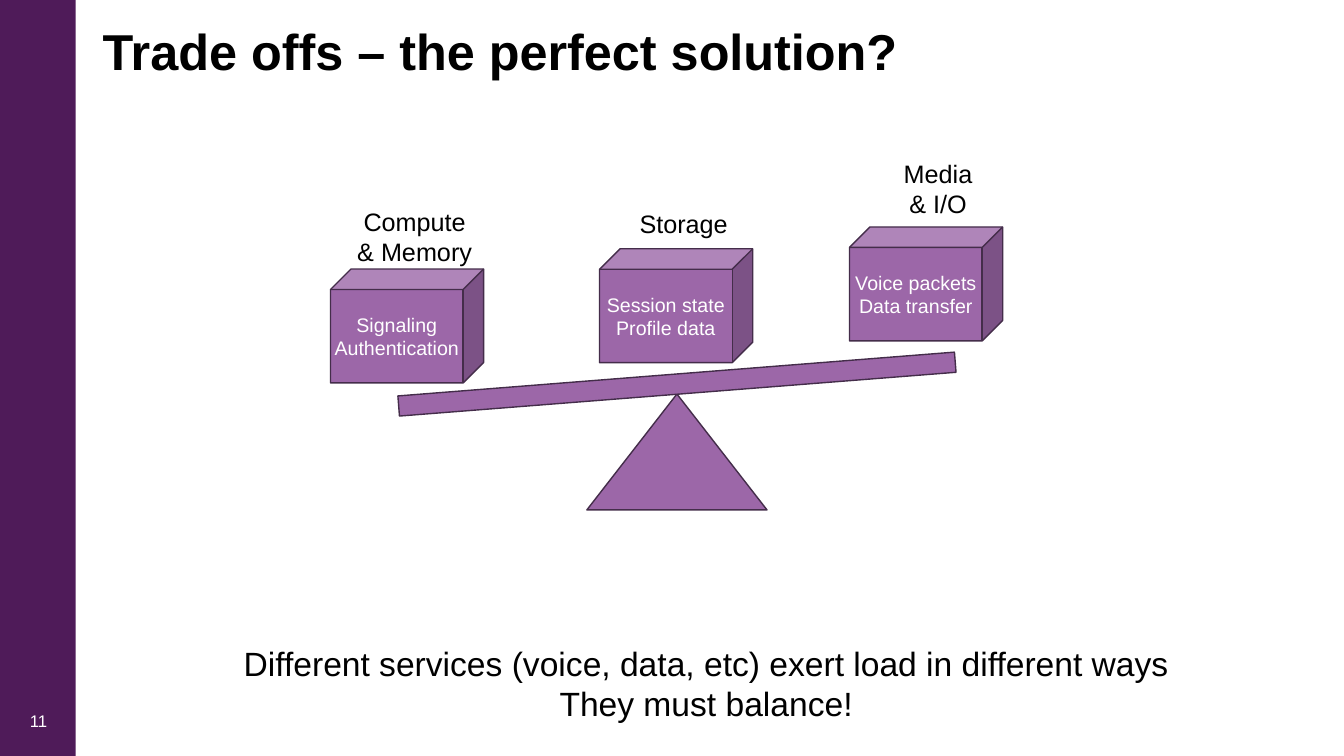
import pptx
import pptx.util
import pptx.dml.color
import pptx.enum.shapes
import pptx.enum.text
from dataclasses import dataclass

Cm = pptx.util.Cm
Shape = pptx.enum.shapes.MSO_SHAPE
Align = pptx.enum.text.PP_ALIGN
Anchor = pptx.enum.text.MSO_ANCHOR

TITLE = "Trade offs – the perfect solution?"
PAGE_NUMBER = "11"
CAPTION = [
    "Different services (voice, data, etc) exert load in different ways",
    "They must balance!",
]
LOADS = [
    {"label": "Compute & Memory", "items": ["Signaling", "Authentication"],
     "cube": (8.33, 6.78), "label_box": (8.71, 5.08, 3.48, 1.8)},
    {"label": "Storage", "items": ["Session state", "Profile data"],
     "cube": (15.11, 6.27), "label_box": (15.49, 5.13, 3.48, 1.02)},
    {"label": "Media & I/O", "items": ["Voice packets", "Data transfer"],
     "cube": (21.41, 5.72), "label_box": (22.28, 3.86, 2.72, 1.8)},
]
CUBE_SIZE = (3.86, 2.87)
CUBE_DEPTH = 0.18
PIVOT = (17.06, 9.93)
FULCRUM_SIZE = (4.54, 2.92)
BEAM_SIZE = (14.07, 0.51)
BEAM_MIDDLE = 9.68
BEAM_TILT = -4.5


@dataclass(frozen=True)
class Theme:
    font: str = "Arial"
    band: str = "4F1B59"
    solid: str = "9C67A8"
    outline: str = "442D4A"
    dark: str = "000000"
    light: str = "FFFFFF"
    title: int = 36
    caption: int = 24
    label: int = 18
    item: int = 14
    number: int = 12


THEME = Theme()


def color(code):
    return pptx.dml.color.RGBColor.from_string(code)


def write_text(box, lines, size, ink=THEME.dark, bold=False, align=Align.CENTER,
               anchor=Anchor.TOP, wrap=True, spacing=None, inset=None):
    frame = box.text_frame
    frame.word_wrap = wrap
    frame.vertical_anchor = anchor
    if inset is not None:
        frame.margin_left = frame.margin_right = Cm(inset)
        frame.margin_top = frame.margin_bottom = Cm(inset)
    for index, line in enumerate(lines):
        para = frame.paragraphs[0] if index == 0 else frame.add_paragraph()
        para.alignment = align
        if spacing:
            para.line_spacing = spacing
        span = para.add_run()
        span.text = line
        span.font.name = THEME.font
        span.font.size = pptx.util.Pt(size)
        span.font.bold = bold
        span.font.color.rgb = color(ink)


def add_text(page, area, lines, size, **style):
    box = page.shapes.add_textbox(*map(Cm, area))
    write_text(box, lines, size, **style)


def add_solid(page, kind, area, fill=THEME.solid, outline=THEME.outline):
    shape = page.shapes.add_shape(kind, *map(Cm, area))
    shape.shadow.inherit = False
    shape.fill.solid()
    shape.fill.fore_color.rgb = color(fill)
    if outline:
        shape.line.color.rgb = color(outline)
        shape.line.width = pptx.util.Pt(1)
    else:
        shape.line.fill.background()
    return shape


def add_seesaw(page):
    pivot_x, pivot_y = PIVOT
    width, height = FULCRUM_SIZE
    add_solid(page, Shape.ISOSCELES_TRIANGLE,
              (pivot_x - width / 2, pivot_y, width, height))
    width, height = BEAM_SIZE
    beam = add_solid(page, Shape.RECTANGLE,
                     (pivot_x - width / 2, BEAM_MIDDLE - height / 2, width, height))
    beam.rotation = BEAM_TILT


def add_load(page, load):
    add_text(page, load["label_box"], [load["label"]], THEME.label)
    cube = add_solid(page, Shape.CUBE, load["cube"] + CUBE_SIZE)
    cube.adjustments[0] = CUBE_DEPTH
    write_text(cube, load["items"], THEME.item, ink=THEME.light,
               anchor=Anchor.MIDDLE, inset=0)


def main():
    deck = pptx.Presentation()
    deck.slide_width, deck.slide_height = Cm(33.87), Cm(19.05)
    page = deck.slides.add_slide(deck.slide_layouts[6])
    add_solid(page, Shape.RECTANGLE, (0, 0, 1.91, 19.05), THEME.band, None)
    add_text(page, (2.34, 0.51, 30.94, 1.73), [TITLE], THEME.title, bold=True,
             align=Align.LEFT, anchor=Anchor.MIDDLE, spacing=0.9)
    add_seesaw(page)
    for load in LOADS:
        add_load(page, load)
    add_text(page, (5.77, 16.08, 24.05, 2.31), CAPTION, THEME.caption, wrap=False)
    add_text(page, (0.3, 17.65, 1.14, 1.02), [PAGE_NUMBER], THEME.number,
             ink=THEME.light, align=Align.RIGHT, anchor=Anchor.MIDDLE)
    deck.save("out.pptx")


if __name__ == "__main__":
    main()
